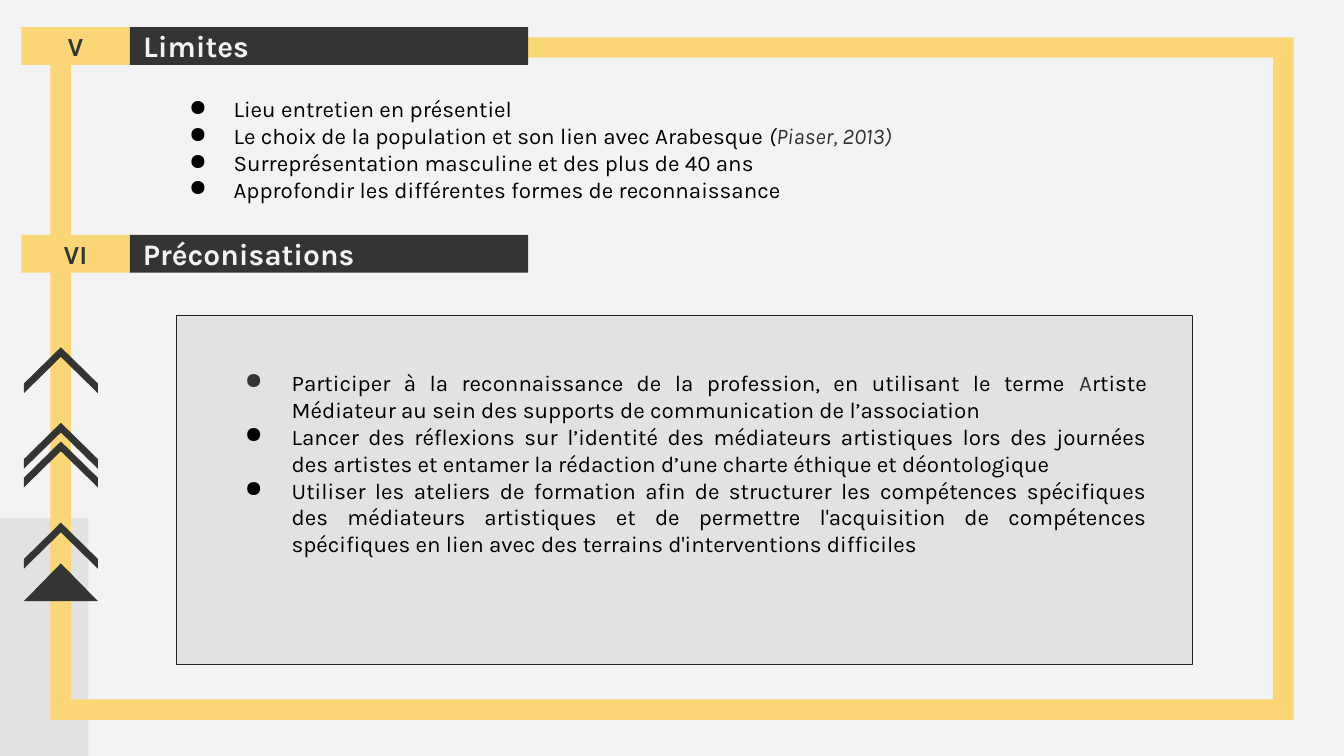
from lxml import etree
from pptx import Presentation
from pptx.dml.color import RGBColor
from pptx.enum.shapes import MSO_SHAPE
from pptx.enum.text import MSO_ANCHOR, MSO_AUTO_SIZE, PP_ALIGN
from pptx.oxml.ns import qn
from pptx.util import Pt

RECT, FRAME = MSO_SHAPE.RECTANGLE, MSO_SHAPE.FRAME
CHEVRON, TRIANGLE = MSO_SHAPE.CHEVRON, MSO_SHAPE.ISOSCELES_TRIANGLE
TOP, MIDDLE = MSO_ANCHOR.TOP, MSO_ANCHOR.MIDDLE
NO_AUTOSIZE = MSO_AUTO_SIZE.NONE
LEFT, CENTER, JUSTIFY = PP_ALIGN.LEFT, PP_ALIGN.CENTER, PP_ALIGN.JUSTIFY

PAPER = RGBColor(0xF3, 0xF3, 0xF3)
GREY = RGBColor(0xE2, 0xE2, 0xE2)
YELLOW = RGBColor(0xFA, 0xD6, 0x77)
DARK = RGBColor(0x33, 0x35, 0x32)
CITATION = RGBColor(0x32, 0x32, 0x32)
OUTLINE = RGBColor(0x21, 0x21, 0x21)
BLACK = RGBColor(0, 0, 0)
FONT = "Karla"
INSET = 7.2

LIMITS = [
    [("Lieu entretien en présentiel", {})],
    [("Le choix de la population et son lien avec Arabesque ", {}),
     ("(", {"italic": True}),
     ("Piaser, 2013)", {"italic": True, "color": CITATION})],
    [("Surreprésentation masculine et des plus de 40 ans", {})],
    [("Approfondir les différentes formes de reconnaissance", {})],
]
RECOMMENDATIONS = [
    [("Participer à la reconnaissance de la profession, en utilisant le terme ", {}),
     ("A", {"color": DARK}),
     ("rtiste Médiateur au sein des supports de communication de l’association", {})],
    [("Lancer des réflexions sur l’identité des médiateurs artistiques lors des "
      "journées des artistes et entamer la rédaction d’une charte éthique et "
      "déontologique", {})],
    [("Utiliser les ateliers de formation afin de structurer les compétences "
      "spécifiques des médiateurs artistiques et de permettre l'acquisition de "
      "compétences spécifiques en lien avec des terrains d'interventions "
      "difficiles", {})],
]


def add_text(paragraph, text, size=12, color=BLACK, bold=False, italic=False):
    """Append a formatted run to a paragraph."""
    run = paragraph.add_run()
    run.text = text
    font = run.font
    font.name, font.size, font.bold, font.italic = FONT, Pt(size), bold, italic
    font.color.rgb = color


def add_block(slide, kind, left, top, width, height, fill, line=None):
    """Add a flat preset shape, outlined only when a line colour is given."""
    block = slide.shapes.add_shape(kind, Pt(left), Pt(top), Pt(width), Pt(height))
    block.shadow.inherit = False
    block.fill.solid()
    block.fill.fore_color.rgb = fill
    if line is None:
        block.line.fill.background()
    else:
        block.line.color.rgb = line
        block.line.width = Pt(0.75)
    return block


def prepare_frame(holder, anchor, top_inset=INSET):
    """Set wrapping, anchor and insets, and return the text frame."""
    frame = holder.text_frame
    frame.word_wrap = True
    frame.auto_size = NO_AUTOSIZE
    frame.vertical_anchor = anchor
    frame.margin_left = frame.margin_right = frame.margin_bottom = Pt(INSET)
    frame.margin_top = Pt(top_inset)
    return frame


def label(holder, text, align, **style):
    """Write one vertically centred line in a shape."""
    paragraph = prepare_frame(holder, MIDDLE).paragraphs[0]
    paragraph.alignment = align
    add_text(paragraph, text, bold=True, **style)


def set_bullet(paragraph, indent, color):
    """Give a paragraph a round bullet with a hanging indent."""
    properties = paragraph._p.get_or_add_pPr()
    properties.set("marL", str(Pt(36)))
    properties.set("indent", str(-Pt(indent)))
    bullet_color = etree.SubElement(properties, qn("a:buClr"))
    etree.SubElement(bullet_color, qn("a:srgbClr"), val=str(color))
    etree.SubElement(properties, qn("a:buChar"), char="●")


def bullet_list(slide, left, top, width, height, items, align=LEFT,
                indent=23.8, top_inset=INSET, first_bullet=BLACK):
    """Add a bulleted text box in the given box."""
    box = slide.shapes.add_textbox(Pt(left), Pt(top), Pt(width), Pt(height))
    frame = prepare_frame(box, TOP, top_inset)
    for index, runs in enumerate(items):
        paragraph = frame.add_paragraph() if index else frame.paragraphs[0]
        paragraph.alignment = align
        set_bullet(paragraph, indent, BLACK if index else first_bullet)
        for text, style in runs:
            add_text(paragraph, text, **style)


def section_header(slide, left, top, width, height, number, heading, title=None):
    """Add a numbered heading bar, using the title placeholder if given."""
    number_width = 58
    bar_box = left + number_width, top, width - number_width, height
    if title is None:
        title = add_block(slide, RECT, *bar_box, DARK)
    else:
        title.left, title.top, title.width, title.height = map(Pt, bar_box)
        title.fill.solid()
        title.fill.fore_color.rgb = DARK
        slide.shapes._spTree.append(title._element)
    label(title, heading, LEFT, size=16, color=PAPER)
    number_tab = add_block(slide, RECT, left, top, number_width, height, YELLOW)
    label(number_tab, number, CENTER, size=14, color=DARK)


def arrow_column(slide, left, top, width):
    """Stack upward chevrons above a triangle."""
    depth = 24.6
    for offset in (0, 40.5, 50.5, 94):
        chevron = add_block(slide, CHEVRON, left + (width - depth) / 2,
                            top + offset + (depth - width) / 2, depth, width, DARK)
        chevron.adjustments[0] = 0.79
        chevron.rotation = 270
    add_block(slide, TRIANGLE, left, top + 115.8, width, 20.2, DARK)


def backdrop(slide, width, height):
    """Draw the background, corner block, border and arrows."""
    slide.background.fill.solid()
    slide.background.fill.fore_color.rgb = PAPER
    add_block(slide, RECT, 0, height - 127.4, 47.3, 127.4, GREY)
    border = add_block(slide, FRAME, 27, 20, width - 54, height - 39.4, YELLOW)
    border.adjustments[0] = 0.03
    arrow_column(slide, 12.8, 186, 39.6)


def recommendations_panel(slide, left, top, width, height):
    """Draw the outlined panel and its justified list."""
    add_block(slide, RECT, left, top, width, height, GREY, OUTLINE)
    bullet_list(slide, left + 18.7, top + 7.2, width - 36, height - 15,
                RECOMMENDATIONS, align=JUSTIFY, indent=25,
                top_inset=INSET + 14.4, first_bullet=DARK)


def main():
    """Build and save the slide."""
    width, height = 720, 405
    deck = Presentation()
    deck.slide_width, deck.slide_height = Pt(width), Pt(height)
    slide = deck.slides.add_slide(deck.slide_layouts[5])
    backdrop(slide, width, height)
    recommendations_panel(slide, 94.5, 169, 544.3, 187)
    section_header(slide, 11.5, 14.5, 271.5, 20.3, "V", "Limites", slide.shapes.title)
    bullet_list(slide, 82.1, 44, 556.6, 82, LIMITS)
    section_header(slide, 11.5, 125.8, 271.5, 20.3, "VI", "Préconisations")
    deck.save("out.pptx")


if __name__ == "__main__":
    main()
